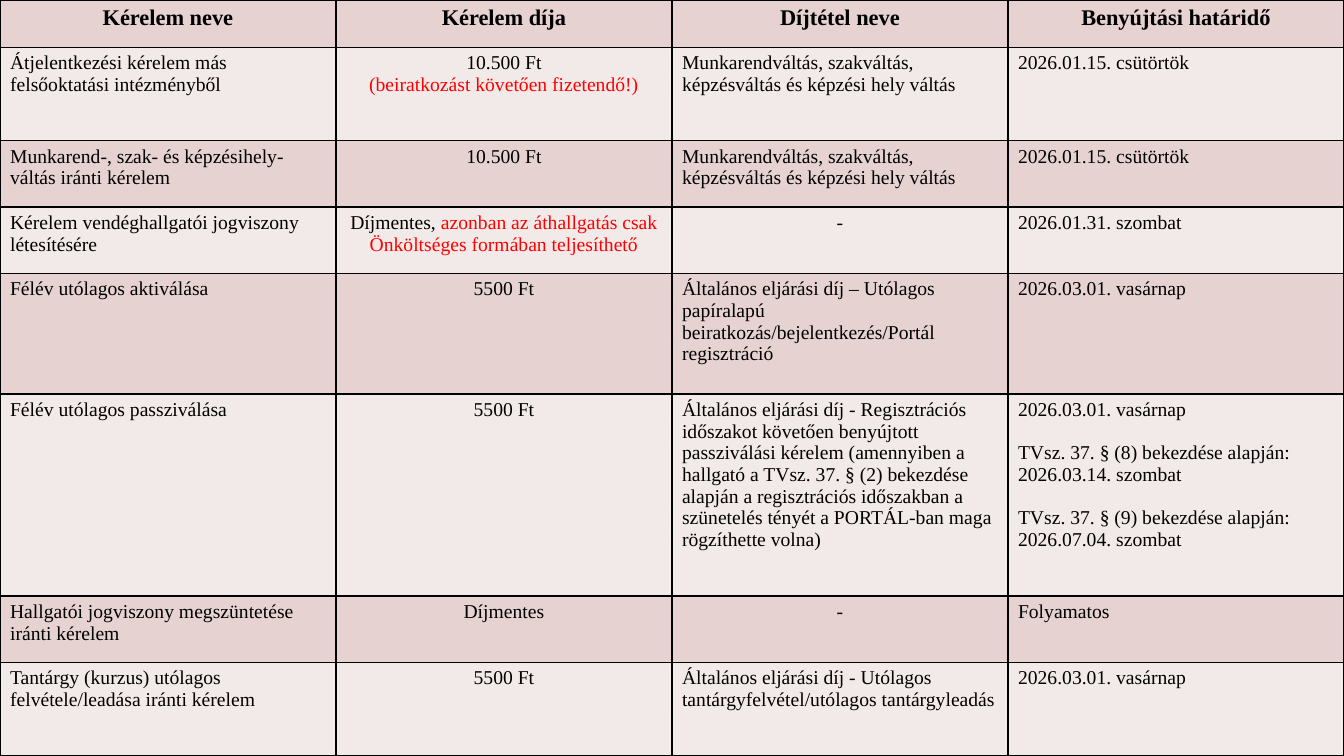
from lxml.etree import SubElement as add_element
from pptx import Presentation
from pptx.dml.color import RGBColor as Color
from pptx.enum.text import PP_ALIGN as Align
from pptx.oxml.ns import qn
from pptx.util import Inches, Pt

COLORS = {
    "page": "28EBF0",
    "dark": "E5D2D1",
    "light": "F2EAE9",
    "text": "000000",
    "warning": "FF0000",
    "border": "000000",
}
FEE_COLUMN = 1
LINE_GAP = Pt(15.5)
ROW_SHARES = [0.47, 0.93, 0.66, 0.66, 1.2, 2.01, 0.66, 0.93]
MAJOR_CHANGE = "Munkarendváltás, szakváltás, képzésváltás és képzési hely váltás"

REQUESTS = [
    ["Kérelem neve", "Kérelem díja", "Díjtétel neve", "Benyújtási határidő"],
    [
        "Átjelentkezési kérelem más felsőoktatási intézményből",
        "10.500 Ft\n|(beiratkozást követően fizetendő!)",
        MAJOR_CHANGE,
        "2026.01.15. csütörtök",
    ],
    [
        "Munkarend-, szak- és képzésihely-váltás iránti kérelem",
        "10.500 Ft",
        MAJOR_CHANGE,
        "2026.01.15. csütörtök",
    ],
    [
        "Kérelem vendéghallgatói jogviszony létesítésére",
        "Díjmentes, |azonban az áthallgatás csak Önköltséges formában teljesíthető",
        "-",
        "2026.01.31. szombat",
    ],
    [
        "Félév utólagos aktiválása",
        "5500 Ft",
        "Általános eljárási díj – Utólagos papíralapú "
        "beiratkozás/bejelentkezés/Portál regisztráció",
        "2026.03.01. vasárnap",
    ],
    [
        "Félév utólagos passziválása",
        "5500 Ft",
        "Általános eljárási díj - Regisztrációs időszakot követően benyújtott "
        "passziválási kérelem (amennyiben a hallgató a TVsz. 37. § (2) bekezdése "
        "alapján a regisztrációs időszakban a szünetelés tényét a PORTÁL-ban maga "
        "rögzíthette volna)",
        "2026.03.01. vasárnap\n"
        "TVsz. 37. § (8) bekezdése alapján:\n2026.03.14. szombat\n"
        "TVsz. 37. § (9) bekezdése alapján:\n2026.07.04. szombat",
    ],
    [
        "Hallgatói jogviszony megszüntetése iránti kérelem",
        "Díjmentes",
        "-",
        "Folyamatos",
    ],
    [
        "Tantárgy (kurzus) utólagos felvétele/leadása iránti kérelem",
        "5500 Ft",
        "Általános eljárási díj - Utólagos tantárgyfelvétel/utólagos tantárgyleadás",
        "2026.03.01. vasárnap",
    ],
]


def paint(cell, fill):
    properties = cell._tc.get_or_add_tcPr()
    for side in ("a:lnL", "a:lnR", "a:lnT", "a:lnB"):
        line = add_element(properties, qn(side), w=str(Pt(1)))
        solid = add_element(line, qn("a:solidFill"))
        add_element(solid, qn("a:srgbClr"), val=COLORS["border"])
    cell.fill.solid()
    cell.fill.fore_color.rgb = Color.from_string(COLORS[fill])


def write(cell, text, align, font_format):
    frame = cell.text_frame
    for index, content in enumerate(text.split("\n")):
        para = frame.add_paragraph() if index else frame.paragraphs[0]
        para.alignment = align
        if index and content.startswith("TVsz."):
            para.space_before = LINE_GAP
        for piece, color in zip(content.split("|"), ("text", "warning")):
            if not piece:
                continue
            span = para.add_run()
            span.text = piece
            span.font.color.rgb = Color.from_string(COLORS[color])
            for name, value in font_format.items():
                setattr(span.font, name, value)


deck = Presentation()
deck.slide_width = Inches(13.33)
deck.slide_height = Inches(7.5)
page = deck.slides.add_slide(deck.slide_layouts[6])
page.background.fill.solid()
page.background.fill.fore_color.rgb = Color.from_string(COLORS["page"])

column_count = len(REQUESTS[0])
fee_table = page.shapes.add_table(
    len(REQUESTS), column_count, 0, 0, deck.slide_width, deck.slide_height
).table
for column in fee_table.columns:
    column.width = deck.slide_width // column_count
for row, share in zip(fee_table.rows, ROW_SHARES):
    row.height = int(deck.slide_height * share / sum(ROW_SHARES))

for row_index, request in enumerate(REQUESTS):
    is_header = row_index == 0
    font_format = {
        "name": "Times New Roman",
        "size": Pt(16 if is_header else 14),
        "bold": is_header,
    }
    for column_index, text in enumerate(request):
        cell = fee_table.cell(row_index, column_index)
        centered = is_header or column_index == FEE_COLUMN or text == "-"
        paint(cell, "light" if row_index % 2 else "dark")
        write(cell, text, Align.CENTER if centered else Align.LEFT, font_format)

deck.save("out.pptx")
